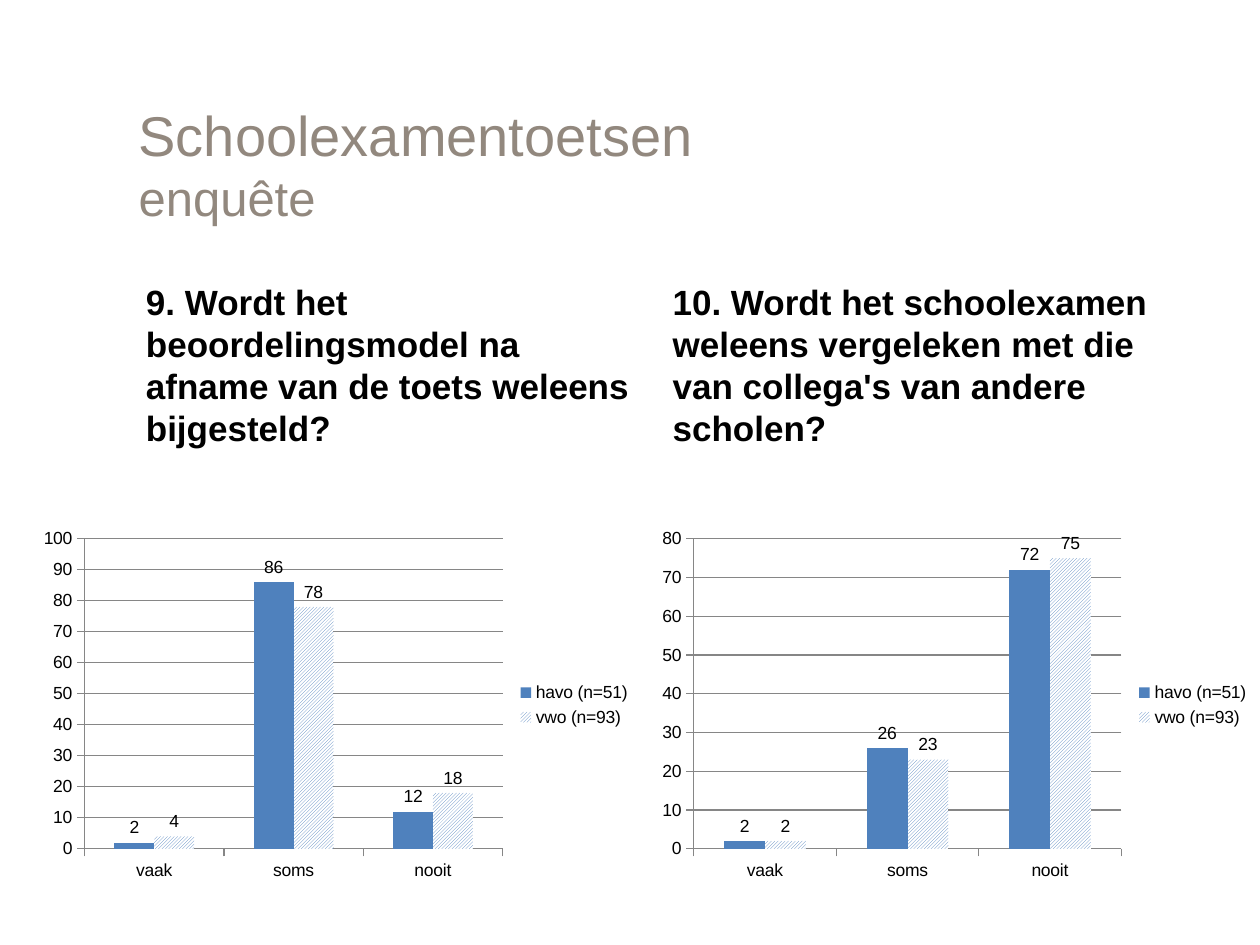
from pptx import Presentation
from pptx.chart.data import CategoryChartData
from pptx.dml.color import RGBColor
from pptx.enum.chart import XL_CHART_TYPE, XL_LABEL_POSITION, XL_LEGEND_POSITION, XL_TICK_MARK
from pptx.enum.dml import MSO_PATTERN
from pptx.enum.text import MSO_ANCHOR, MSO_AUTO_SIZE, PP_ALIGN
from pptx.util import Inches, Pt

FONT = "Arial"
COLORS = {"title": "92887E", "text": "000000", "bar": "4F81BD", "paper": "FFFFFF", "axis": "868686"}
TITLE = [("Schoolexamentoetsen", 32), ("enquête", 28)]
ANSWERS = ["vaak", "soms", "nooit"]
GROUPS = ["havo (n=51)", "vwo (n=93)"]
QUESTIONS = [
    {
        "text": "9. Wordt het beoordelingsmodel na afname van de toets weleens bijgesteld?",
        "text_left": 1.06, "chart_left": 0.25, "axis_max": 100,
        "percentages": [(2, 86, 12), (4, 78, 18)],
    },
    {
        "text": "10. Wordt het schoolexamen weleens vergeleken met die van collega's van andere scholen?",
        "text_left": 5.24, "chart_left": 5.16, "axis_max": 80,
        "percentages": [(2, 26, 72), (2, 23, 75)],
    },
]


def rgb(name):
    return RGBColor.from_string(COLORS[name])


def write(frame, lines, color="text", bold=False, anchor=MSO_ANCHOR.TOP):
    """Fill a text frame with one paragraph of (text, size) lines."""
    frame.word_wrap = True
    frame.auto_size = MSO_AUTO_SIZE.NONE
    frame.vertical_anchor = anchor
    paragraph = frame.paragraphs[0]
    paragraph.alignment = PP_ALIGN.LEFT
    for index, (text, size) in enumerate(lines):
        if index:
            paragraph.add_line_break()
        run = paragraph.add_run()
        run.text = text
        run.font.name = FONT
        run.font.size = Pt(size)
        run.font.bold = bold
        run.font.color.rgb = rgb(color)


def add_answer_chart(slide, question):
    data = CategoryChartData()
    data.categories = ANSWERS
    for group, values in zip(GROUPS, question["percentages"]):
        data.add_series(group, values)
    chart = slide.shapes.add_chart(
        XL_CHART_TYPE.COLUMN_CLUSTERED, Inches(question["chart_left"]), Inches(4.14),
        Inches(4.86), Inches(2.91), data).chart
    chart.has_title = False
    chart.font.name = FONT
    chart.font.size = Pt(10)
    chart.font.color.rgb = rgb("text")
    chart.has_legend = True
    chart.legend.position = XL_LEGEND_POSITION.RIGHT
    chart.legend.include_in_layout = False

    value_axis = chart.value_axis
    value_axis.minimum_scale = 0
    value_axis.maximum_scale = question["axis_max"]
    value_axis.major_unit = 10
    value_axis.has_major_gridlines = True
    for axis in (chart.category_axis, value_axis):
        axis.major_tick_mark = XL_TICK_MARK.OUTSIDE
    for line in (chart.category_axis.format.line, value_axis.format.line,
                 value_axis.major_gridlines.format.line):
        line.color.rgb = rgb("axis")
        line.width = Pt(0.75)

    plot = chart.plots[0]
    plot.vary_by_categories = False
    plot.gap_width = 150
    plot.overlap = 0
    for series in plot.series:
        series.invert_if_negative = False
        series.data_labels.show_value = True
        series.data_labels.position = XL_LABEL_POSITION.OUTSIDE_END
    havo, vwo = (series.format.fill for series in plot.series)
    havo.solid()
    havo.fore_color.rgb = rgb("bar")
    vwo.patterned()
    vwo.pattern = MSO_PATTERN.LIGHT_UPWARD_DIAGONAL
    vwo.fore_color.rgb = rgb("bar")
    vwo.back_color.rgb = rgb("paper")


def main():
    deck = Presentation()
    deck.slide_width, deck.slide_height = Inches(10), Inches(7.5)
    slide = deck.slides.add_slide(deck.slide_layouts[5])

    title = slide.shapes.title
    title.left, title.top = Inches(1), Inches(0.67)
    title.width, title.height = Inches(8.33), Inches(1.25)
    write(title.text_frame, TITLE, color="title", anchor=MSO_ANCHOR.MIDDLE)

    for question in QUESTIONS:
        box = slide.shapes.add_textbox(
            Inches(question["text_left"]), Inches(2.18), Inches(4.07), Inches(4.49))
        write(box.text_frame, [(question["text"], 20)], bold=True)
        add_answer_chart(slide, question)

    deck.save("out.pptx")


if __name__ == "__main__":
    main()
